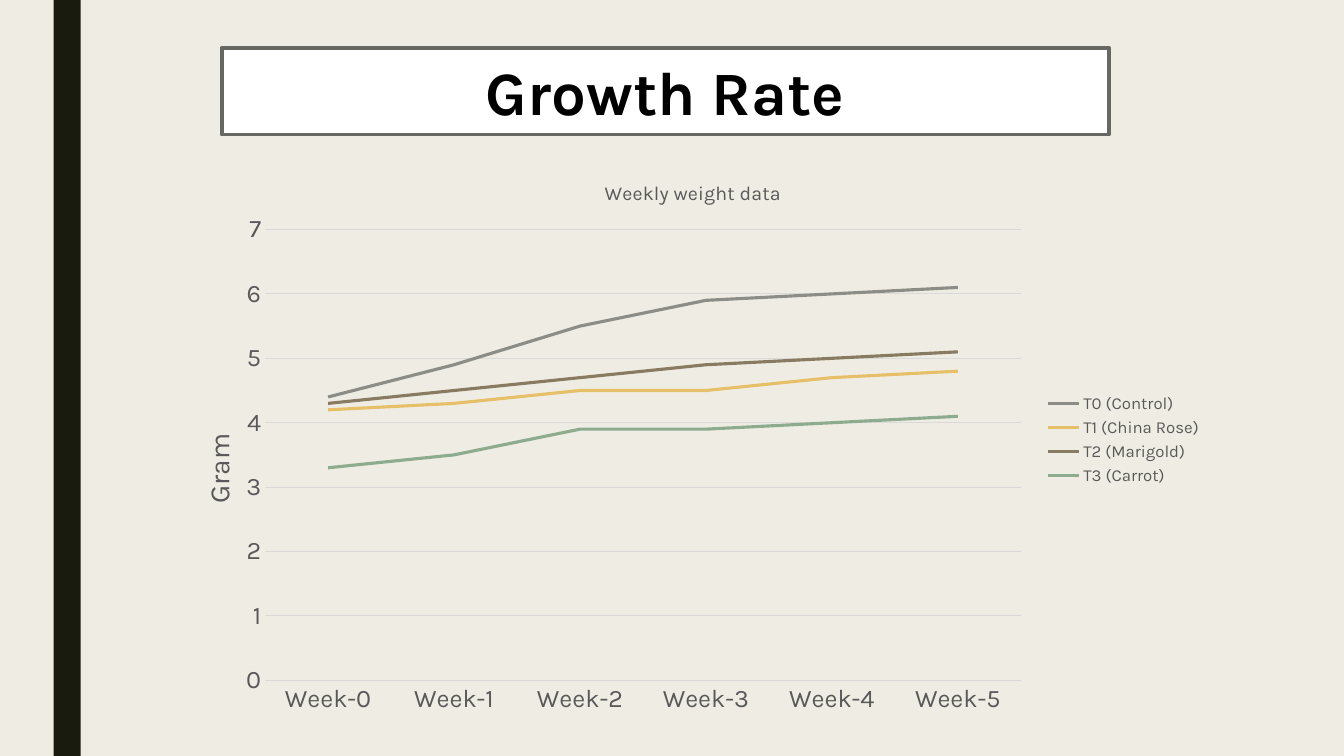
"""Build the Growth Rate slide with its weekly weight line chart."""
import pptx
import pptx.util
import pptx.dml.color
import pptx.chart.data
import pptx.enum.chart
import pptx.enum.shapes
import pptx.enum.text
import pptx.oxml
import pptx.oxml.ns

FONT = "Karla"
SLIDE = (13.33, 7.5)
HEADING = "Growth Rate"
CHART_TITLE = "Weekly weight data"
VALUE_TITLE = "Gram"
WEEKS = [f"Week-{number}" for number in range(6)]
TREATMENTS = [
    ("T0 (Control)", "8C8D86", (4.4, 4.9, 5.5, 5.9, 6, 6.1)),
    ("T1 (China Rose)", "E6C069", (4.2, 4.3, 4.5, 4.5, 4.7, 4.8)),
    ("T2 (Marigold)", "897B61", (4.3, 4.5, 4.7, 4.9, 5, 5.1)),
    ("T3 (Carrot)", "8DAB8E", (3.3, 3.5, 3.9, 3.9, 4, 4.1)),
]
PAPER, BAND, WHITE, BLACK = "EFEDE3", "191B0E", "FFFFFF", "000000"
FRAME, LABEL, GRID = "686863", "595959", "D9D9D9"
BAND_BOX = (0.04, 0, 0.02, 1)
HEADING_BOX = (0.165, 0.063, 0.66, 0.115)
CHART_BOX = (0.1215, 0.204, 0.781, 0.755)
PLOT_SHARE = {"x": 0.097, "y": 0.132, "w": 0.72, "h": 0.79}
CHART_TITLE_SHARE = {"x": 0.417, "y": 0.04}
VALUE_TITLE_SHARE = {"x": 0.03, "y": 0.48}


def rgb(code):
    """Return the colour of a hex string."""
    return pptx.dml.color.RGBColor.from_string(code)


def place(shares):
    """Turn shares of the slide into lengths."""
    return [pptx.util.Inches(share * SLIDE[i % 2]) for i, share in enumerate(shares)]


def style_font(font, size, color, bold=False):
    """Format a font."""
    font.name, font.size, font.bold = FONT, pptx.util.Pt(size), bold
    font.color.rgb = rgb(color)


def write(frame, text, **style):
    """Write one centred, formatted paragraph."""
    paragraph = frame.paragraphs[0]
    paragraph.alignment = pptx.enum.text.PP_ALIGN.CENTER
    run = paragraph.add_run()
    run.text = text
    style_font(run.font, **style)


def add_box(slide, shares, fill):
    """Add a flat filled rectangle without a line."""
    box = slide.shapes.add_shape(pptx.enum.shapes.MSO_SHAPE.RECTANGLE, *place(shares))
    box.shadow.inherit = False
    box.fill.solid()
    box.fill.fore_color.rgb = rgb(fill)
    box.line.fill.background()
    return box


def draw_line(line, color, width):
    """Format a line."""
    line.color.rgb = rgb(color)
    line.width = pptx.util.Pt(width)


def set_layout(parent, index, shares, target=""):
    """Fix a chart part at shares of the chart area."""
    for old in parent.findall(pptx.oxml.ns.qn("c:layout")):
        parent.remove(old)
    modes = "".join(f'<c:{key}Mode val="edge"/>' for key in "xy")
    sizes = "".join(f'<c:{key} val="{share}"/>' for key, share in shares.items())
    parent.insert(index, pptx.oxml.parse_xml(
        f'<c:layout {pptx.oxml.ns.nsdecls("c")}><c:manualLayout>'
        f"{target}{modes}{sizes}</c:manualLayout></c:layout>"))


def add_growth_chart(slide):
    """Add the weekly weight chart."""
    data = pptx.chart.data.CategoryChartData()
    data.categories = WEEKS
    for name, _, weights in TREATMENTS:
        data.add_series(name, weights)
    chart = slide.shapes.add_chart(
        pptx.enum.chart.XL_CHART_TYPE.LINE, *place(CHART_BOX), data).chart
    style_font(chart.font, 10, BLACK)

    weeks, grams = chart.category_axis, chart.value_axis
    for axis in (weeks, grams):
        axis.major_tick_mark = axis.minor_tick_mark = pptx.enum.chart.XL_TICK_MARK.NONE
        style_font(axis.tick_labels.font, 18, LABEL)
    draw_line(weeks.format.line, GRID, 0.75)
    grams.format.line.fill.background()
    draw_line(grams.major_gridlines.format.line, GRID, 0.75)
    grams.minimum_scale, grams.maximum_scale, grams.major_unit = 0, 7, 1
    grams.tick_labels.number_format = "General"
    grams.tick_labels.number_format_is_linked = False

    chart.has_title = grams.has_title = True
    write(chart.chart_title.text_frame, CHART_TITLE, size=14, color=LABEL)
    write(grams.axis_title.text_frame, VALUE_TITLE, size=20, color=LABEL)
    turn = grams.axis_title.text_frame._txBody.bodyPr
    turn.set("rot", "-5400000")
    turn.set("vert", "horz")

    chart.has_legend = True
    chart.legend.position = pptx.enum.chart.XL_LEGEND_POSITION.RIGHT
    chart.legend.include_in_layout = False
    style_font(chart.legend.font, 12, LABEL)

    plot = chart.plots[0]
    plot.vary_by_categories = False
    for series, (_, color, _) in zip(plot.series, TREATMENTS):
        series.smooth = False
        series.marker.style = pptx.enum.chart.XL_MARKER_STYLE.NONE
        draw_line(series.format.line, color, 2.25)

    set_layout(chart.chart_title._element, 1, CHART_TITLE_SHARE)
    set_layout(grams.axis_title._element, 1, VALUE_TITLE_SHARE)
    set_layout(chart._chartSpace.chart.plotArea, 0, PLOT_SHARE,
               '<c:layoutTarget val="inner"/>')


def main():
    """Build and save the slide."""
    deck = pptx.Presentation()
    deck.slide_width, deck.slide_height = map(pptx.util.Inches, SLIDE)
    slide = deck.slides.add_slide(deck.slide_layouts[6])
    slide.background.fill.solid()
    slide.background.fill.fore_color.rgb = rgb(PAPER)
    add_box(slide, BAND_BOX, BAND)
    heading = add_box(slide, HEADING_BOX, WHITE)
    draw_line(heading.line, FRAME, 2.75)
    heading.text_frame.vertical_anchor = pptx.enum.text.MSO_ANCHOR.MIDDLE
    write(heading.text_frame, HEADING, size=44, color=BLACK, bold=True)
    add_growth_chart(slide)
    deck.save("out.pptx")


if __name__ == "__main__":
    main()
